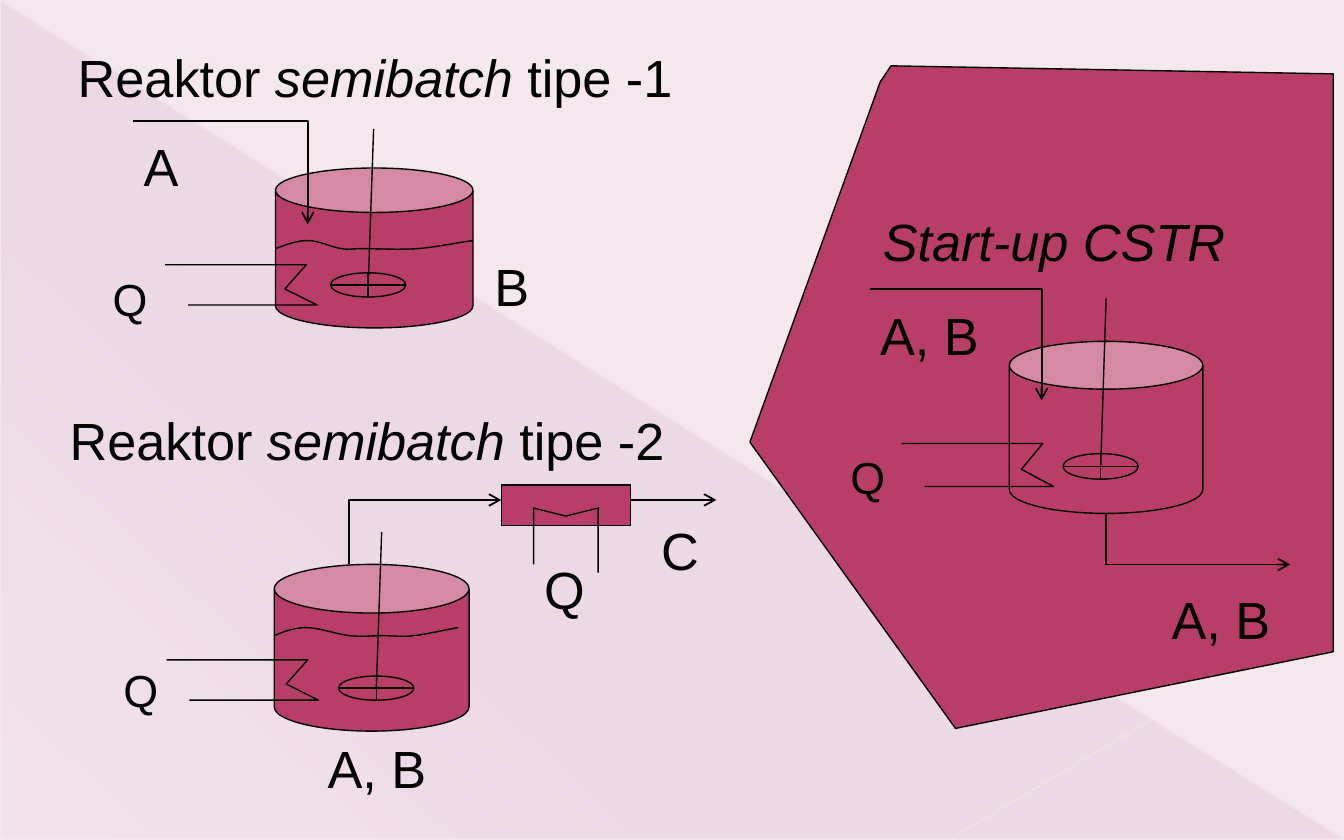
from lxml.etree import SubElement
from pptx import Presentation
from pptx.dml.color import RGBColor
from pptx.enum.shapes import MSO_CONNECTOR, MSO_SHAPE
from pptx.enum.text import MSO_AUTO_SIZE
from pptx.oxml import parse_xml
from pptx.oxml.ns import nsdecls, qn
from pptx.util import Inches, Pt

COLORS = {
    "background": "F4E7ED",
    "shade": "B13F9A",
    "long_ray": "FCEFF5",
    "short_ray": "FDF0F6",
    "vessel": "B83D68",
    "ink": "000000",
}

# Points and boxes are in inches; a label is (runs, size, box), with * marking italics.
REACTORS = [
    {
        "vessel": (2.05, 1.25, 1.47, 1.19), "lid": 0.278,
        "stirrer": (2.74, 2.12, 0.18), "shaft": 1.16,
        "coil": (1.23, 1.97, 0.3),
        "flows": [[(0.99, 0.9), (2.29, 0.9), (2.29, 1.67)]],
        "level": [(2.05, 1.85), (2.13, 1.82), (2.21, 1.79), (2.29, 1.79),
                  (2.37, 1.79), (2.47, 1.84), (2.54, 1.85),
                  (2.61, 1.86), (2.61, 1.85), (2.7, 1.85),
                  (2.8, 1.85), (2.97, 1.86), (3.11, 1.85),
                  (3.24, 1.84), (3.38, 1.81), (3.52, 1.79)],
        "labels": [(["A"], 28, (0.97, 0.95, 0.46, 0.57)),
                   (["B"], 28, (3.58, 1.84, 0.46, 0.57)),
                   (["Q"], 24, (0.74, 1.97, 0.46, 0.51)),
                   (["Reaktor ", "*semibatch", " tipe -1"], 28, (0.48, 0.29, 4.68, 0.57))],
    },
    {
        "backdrop": [(6.55, 0.61), (5.58, 3.29), (7.11, 5.42),
                     (9.92, 4.85), (9.92, 0.55), (6.63, 0.49)],
        "vessel": (7.51, 2.54, 1.44, 1.28), "lid": 0.278,
        "stirrer": (8.19, 3.47, 0.19), "shaft": 1.25,
        "coil": (6.71, 3.3, 0.32),
        "flows": [[(6.47, 2.15), (7.75, 2.15), (7.75, 2.98)],
                  [(8.23, 3.82), (8.23, 4.2), (9.6, 4.2)]],
        "labels": [(["A, B"], 28, (6.45, 2.21, 0.94, 0.57)),
                   (["Q"], 24, (6.23, 3.3, 0.46, 0.5)),
                   (["*Start-up CSTR"], 28, (6.47, 1.51, 2.78, 0.57)),
                   (["A, B"], 28, (8.62, 4.32, 0.94, 0.57))],
    },
    {
        "vessel": (2.04, 4.2, 1.45, 1.24), "lid": 0.292,
        "stirrer": (2.8, 5.12, 0.18), "shaft": 1.16,
        "coil": (1.24, 4.91, 0.3),
        "condenser": (3.73, 3.61, 0.96, 0.3),
        "condenser_coil": [(3.97, 4.2), (3.97, 3.78), (4.21, 3.84), (4.45, 3.78), (4.45, 4.26)],
        "flows": [[(2.6, 4.2), (2.6, 3.72), (3.73, 3.72)],
                  [(4.69, 3.72), (5.33, 3.72)]],
        "level": [(2.04, 4.73), (2.11, 4.7), (2.19, 4.67), (2.28, 4.67),
                  (2.37, 4.67), (2.51, 4.72), (2.6, 4.73),
                  (2.7, 4.74), (2.76, 4.73), (2.84, 4.73),
                  (2.92, 4.73), (2.99, 4.74), (3.08, 4.73),
                  (3.18, 4.72), (3.34, 4.68), (3.41, 4.67)],
        "labels": [(["A, B"], 28, (2.34, 5.43, 0.94, 0.57)),
                   (["Q"], 24, (0.82, 4.88, 0.46, 0.51)),
                   (["Reaktor ", "*semibatch", " tipe -2"], 28, (0.42, 2.99, 4.68, 0.57)),
                   (["C"], 28, (4.82, 3.81, 0.49, 0.57)),
                   (["Q"], 28, (3.95, 4.1, 0.51, 0.57))],
    },
]


def draw_path(shapes, points, arrow=False, closed=False):
    """Draw two points as a connector, more as a freeform, filled if closed."""
    places = [(Inches(x), Inches(y)) for x, y in points]
    if len(places) == 2:
        outline = shapes.add_connector(MSO_CONNECTOR.STRAIGHT, *places[0], *places[1])
    else:
        builder = shapes.build_freeform(*places[0], scale=1.0)
        builder.add_line_segments(places[1:], close=closed)
        outline = builder.convert_to_shape()
        if not closed:
            outline.fill.background()
    style(outline, COLORS["vessel"] if closed else None, 1 if arrow else 0.75)
    if arrow:
        SubElement(outline.line._get_or_add_ln(), qn("a:tailEnd"), type="arrow")


def style(shape, fill=None, width=0.75, line="ink"):
    """Set outline and optional fill, and take the theme shadow away."""
    shape.line.color.rgb = RGBColor.from_string(COLORS[line])
    shape.line.width = Pt(width)
    if fill:
        shape.fill.solid()
        shape.fill.fore_color.rgb = RGBColor.from_string(fill)
    SubElement(shape._element.spPr, qn("a:effectLst"))


prs = Presentation()
prs.slide_width, prs.slide_height = Inches(10), Inches(6.25)
slide = prs.slides.add_slide(prs.slide_layouts[6])
slide.background.fill.solid()
slide.background.fill.fore_color.rgb = RGBColor.from_string(COLORS["background"])

# Background: translucent triangle and two faint rays
shade = slide.shapes.add_shape(
    MSO_SHAPE.RIGHT_TRIANGLE, Inches(0.01), Inches(0.01), Inches(9.98), Inches(6.23))
shade.shadow.inherit = False
shade.line.fill.background()
stops = "".join(
    f'<a:gs pos="{pos * 1000}"><a:srgbClr val="{COLORS["shade"]}">'
    f'<a:alpha val="{alpha * 1000}"/></a:srgbClr></a:gs>'
    for pos, alpha in [(0, 10), (70, 8), (100, 1)])
shade._element.spPr.find(qn("a:prstGeom")).addnext(parse_xml(
    f'<a:gradFill {nsdecls("a")}><a:gsLst>{stops}</a:gsLst>'
    f'<a:lin ang="{133 * 60000}" scaled="0"/></a:gradFill>'))

for start, end, color, width, alpha in [
    ((0, 0.01), (9.99, 6.24), "long_ray", 0.39, 35),
    ((10, 4.51), (7.07, 6.24), "short_ray", 0.47, 45),
]:
    ray = slide.shapes.add_connector(
        MSO_CONNECTOR.STRAIGHT, *map(Inches, start), *map(Inches, end))
    style(ray, width=width, line=color)
    ray_color = ray.line._get_or_add_ln().find(".//" + qn("a:srgbClr"))
    SubElement(ray_color, qn("a:alpha"), val=str(alpha * 1000))

for reactor in REACTORS:
    shapes = slide.shapes.add_group_shape().shapes
    if "backdrop" in reactor:
        draw_path(shapes, reactor["backdrop"], closed=True)

    vessel = shapes.add_shape(MSO_SHAPE.CAN, *map(Inches, reactor["vessel"]))
    vessel.adjustments[0] = reactor["lid"]
    style(vessel, COLORS["vessel"])

    x, y, height = reactor["stirrer"]
    impeller = shapes.add_shape(
        MSO_SHAPE.FLOWCHART_OR, Inches(x - 0.28), Inches(y - height / 2),
        Inches(0.56), Inches(height))
    style(impeller, COLORS["vessel"])
    draw_path(shapes, [(x, y), (x + 0.04, y - reactor["shaft"])])

    if "level" in reactor:
        curve = reactor["level"]
        surface = [curve[0]]
        for i in range(0, len(curve) - 1, 3):
            for t in (step / 8 for step in range(1, 9)):
                weights = ((1 - t) ** 3, 3 * t * (1 - t) ** 2, 3 * t ** 2 * (1 - t), t ** 3)
                surface.append(tuple(
                    sum(w * p[axis] for w, p in zip(weights, curve[i:i + 4]))
                    for axis in (0, 1)))
        draw_path(shapes, surface)

    x, y, height = reactor["coil"]
    draw_path(shapes, [(x + dx, y + dy * height) for dx, dy in
                       [(0, 0), (1.05, 0), (0.89, 0.6), (1.13, 1), (0.17, 1)]])

    if "condenser" in reactor:
        condenser = shapes.add_shape(MSO_SHAPE.RECTANGLE, *map(Inches, reactor["condenser"]))
        style(condenser, COLORS["vessel"])
        draw_path(shapes, reactor["condenser_coil"])

    for flow in reactor["flows"]:
        draw_path(shapes, flow, arrow=True)

    for texts, size, box in reactor["labels"]:
        frame = shapes.add_textbox(*map(Inches, box)).text_frame
        frame.word_wrap = False
        frame.auto_size = MSO_AUTO_SIZE.SHAPE_TO_FIT_TEXT
        for text in texts:
            run = frame.paragraphs[0].add_run()
            run.text = text.lstrip("*")
            run.font.name = "Arial"
            run.font.size = Pt(size)
            run.font.italic = text.startswith("*")
            run.font.color.rgb = RGBColor.from_string(COLORS["ink"])

prs.save("out.pptx")
